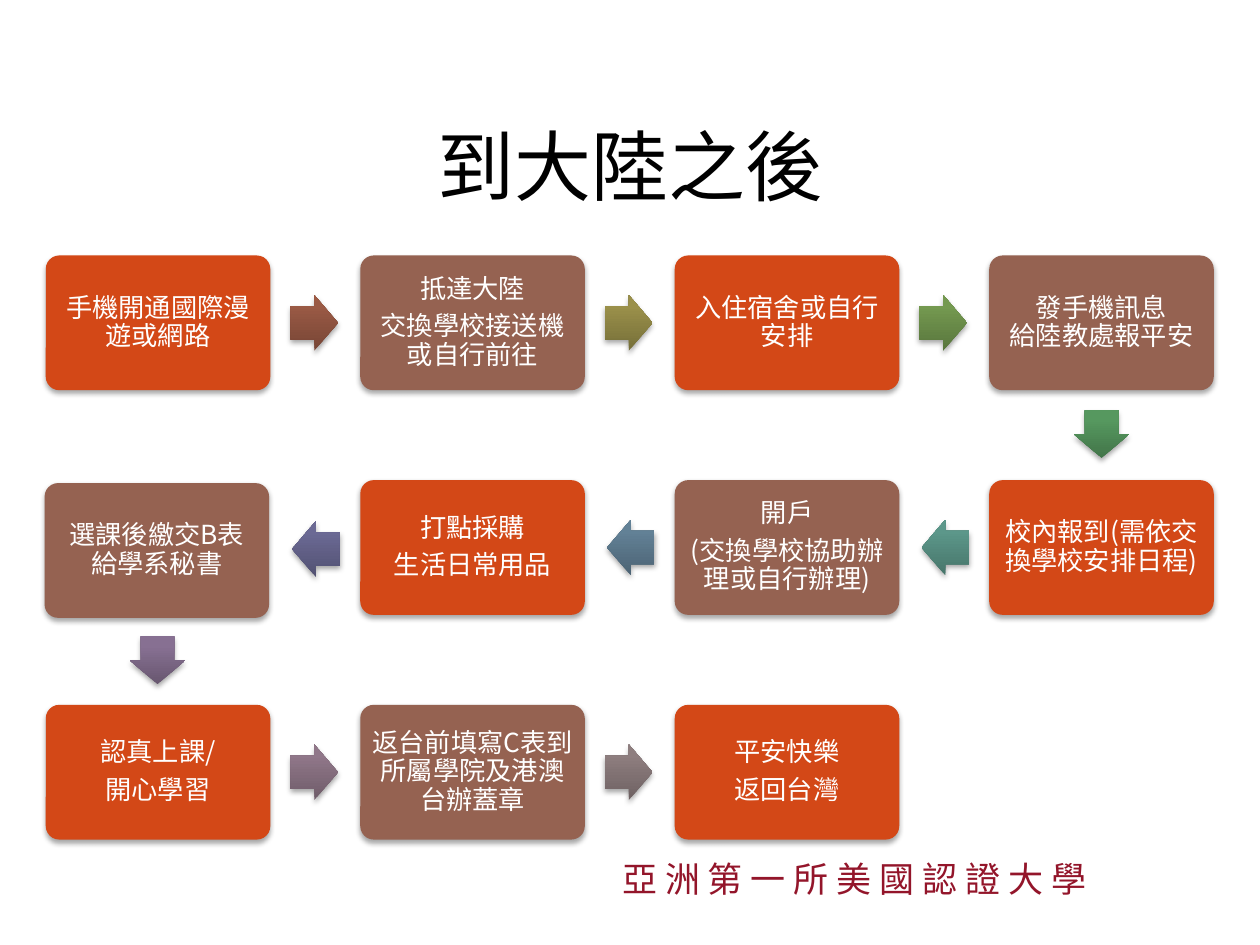
"""Build the flow-chart slide of the steps after arriving in mainland China."""
from lxml.etree import SubElement
from pptx import Presentation
from pptx.dml.color import RGBColor
from pptx.enum.shapes import MSO_SHAPE as SHAPE
from pptx.enum.text import MSO_ANCHOR as ANCHOR, PP_ALIGN as ALIGN
from pptx.oxml import parse_xml
from pptx.oxml.ns import nsdecls, qn
from pptx.util import Pt

TITLE = "到大陸之後"
SLOGAN = "亞 洲 第 一 所 美 國 認 證 大 學"
STEPS = [
    "手機開通國際漫遊或網路",
    "抵達大陸\n交換學校接送機或自行前往",
    "入住宿舍或自行安排",
    "發手機訊息\v給陸教處報平安",
    "校內報到(需依交換學校安排日程)",
    "開戶\n(交換學校協助辦理或自行辦理)",
    "打點採購\n生活日常用品",
    "選課後繳交B表給學系秘書",
    "認真上課/\n開心學習",
    "返台前填寫C表到所屬學院及港澳台辦蓋章",
    "平安快樂\n返回台灣",
]
ARROW_GRADIENTS = [
    ("774535", "9A5A45", "9D5A43"),
    ("766F39", "9A904A", "9C9249"),
    ("59763D", "749950", "749B4F"),
    ("427549", "56985F", "559A5F"),
    ("47756A", "5C978A", "5B998B"),
    ("4C6374", "628196", "628298"),
    ("525172", "6B6994", "6A6995"),
    ("685770", "877092", "877093"),
    ("6F5C69", "907789", "91778A"),
    ("6E6162", "8E7E7F", "8F7E80"),
]
NUDGES = {7: (-0.7, 1.7)}

FONT = "Noto Sans CJK SC"
ORANGE = RGBColor(0xD3, 0x48, 0x17)
BROWN = RGBColor(0x95, 0x62, 0x51)
MAROON = RGBColor(0x93, 0x15, 0x2A)
WHITE = RGBColor(0xFF, 0xFF, 0xFF)
BLACK = RGBColor(0, 0, 0)

COLUMNS = 4
GRID_LEFT, GRID_TOP = 26.2, 146
PITCH_X, PITCH_Y = 179.7, 128.4
BOX_W, BOX_H = 128.3, 77
ARROW_W, ARROW_H = 27.2, 31.8
ARROW_BACK = 0.6
DIRECTIONS = {(1, 0): 0, (0, 1): 90, (-1, 0): 180}


def style_text(frame, size, color, align, spacing=None, after=None):
    for paragraph in frame.paragraphs:
        paragraph.alignment = align
        paragraph.line_spacing = spacing
        paragraph.space_after = after
        font = paragraph.font
        font.size, font.name, font.color.rgb = Pt(size), FONT, color
        defaults = paragraph._p.find(".//" + qn("a:defRPr"))
        SubElement(defaults, qn("a:ea"), typeface=FONT)


def add_shadow(shape):
    shape.line.fill.background()
    shape.shadow.inherit = False
    effects = shape._element.spPr.find(qn("a:effectLst"))
    effects.append(parse_xml(
        f'<a:outerShdw {nsdecls("a")} blurRad="{Pt(3.1)}" dist="{Pt(1.8)}" dir="5400000" '
        'rotWithShape="0"><a:srgbClr val="000000"><a:alpha val="35000"/></a:srgbClr></a:outerShdw>'))


def fill_gradient(shape, colors):
    stops = "".join(f'<a:gs pos="{pos}"><a:srgbClr val="{color}"/></a:gs>'
                    for pos, color in zip((0, 80000, 100000), colors))
    geometry = shape._element.spPr.find(qn("a:prstGeom"))
    geometry.addnext(parse_xml(
        f'<a:gradFill {nsdecls("a")} rotWithShape="0"><a:gsLst>{stops}</a:gsLst>'
        '<a:lin ang="16200000" scaled="0"/></a:gradFill>'))


def grid_cell(index):
    row, column = divmod(index, COLUMNS)
    return (COLUMNS - 1 - column if row % 2 else column), row


def box_corner(index):
    column, row = grid_cell(index)
    dx, dy = NUDGES.get(index, (0, 0))
    return GRID_LEFT + column * PITCH_X + dx, GRID_TOP + row * PITCH_Y + dy


def add_step(slide, index):
    x, y = box_corner(index)
    box = slide.shapes.add_shape(SHAPE.ROUNDED_RECTANGLE, Pt(x), Pt(y), Pt(BOX_W), Pt(BOX_H))
    box.adjustments[0] = 0.1
    box.fill.solid()
    box.fill.fore_color.rgb = BROWN if index % 2 else ORANGE
    add_shadow(box)
    frame = box.text_frame
    frame.margin_left = frame.margin_right = frame.margin_top = frame.margin_bottom = Pt(4.5)
    frame.word_wrap = True
    frame.vertical_anchor = ANCHOR.MIDDLE
    frame.text = STEPS[index]
    style_text(frame, 15, WHITE, ALIGN.CENTER, 0.9, Pt(5.25))


def add_arrow(slide, index):
    (column, row), (next_column, next_row) = grid_cell(index), grid_cell(index + 1)
    step_x, step_y = next_column - column, next_row - row
    (x, y), (next_x, next_y) = box_corner(index), box_corner(index + 1)
    center_x = (x + next_x + BOX_W) / 2 - ARROW_BACK * step_x
    center_y = (y + next_y + BOX_H) / 2 - ARROW_BACK * step_y
    arrow = slide.shapes.add_shape(
        SHAPE.RIGHT_ARROW, Pt(center_x - ARROW_W / 2), Pt(center_y - ARROW_H / 2),
        Pt(ARROW_W), Pt(ARROW_H))
    arrow.adjustments[0], arrow.adjustments[1] = 0.6, 0.5
    arrow.rotation = DIRECTIONS[step_x, step_y]
    fill_gradient(arrow, ARROW_GRADIENTS[index])
    add_shadow(arrow)


def main():
    deck = Presentation()
    deck.slide_width, deck.slide_height = Pt(720), Pt(540)
    slide = deck.slides.add_slide(deck.slide_layouts[5])

    slogan = slide.shapes.add_textbox(Pt(348.5), Pt(491), Pt(345.6), Pt(26.6)).text_frame
    slogan.word_wrap = True
    slogan.text = SLOGAN
    style_text(slogan, 20, MAROON, ALIGN.LEFT, 0.8)

    title = slide.shapes.title
    title.left, title.top, title.width, title.height = Pt(54), Pt(60.5), Pt(612), Pt(67.7)
    title.text_frame.vertical_anchor = ANCHOR.MIDDLE
    title.text_frame.text = TITLE
    style_text(title.text_frame, 44, BLACK, ALIGN.CENTER)

    for index in range(len(STEPS)):
        add_step(slide, index)
    for index in range(len(ARROW_GRADIENTS)):
        add_arrow(slide, index)
    deck.save("out.pptx")


if __name__ == "__main__":
    main()
